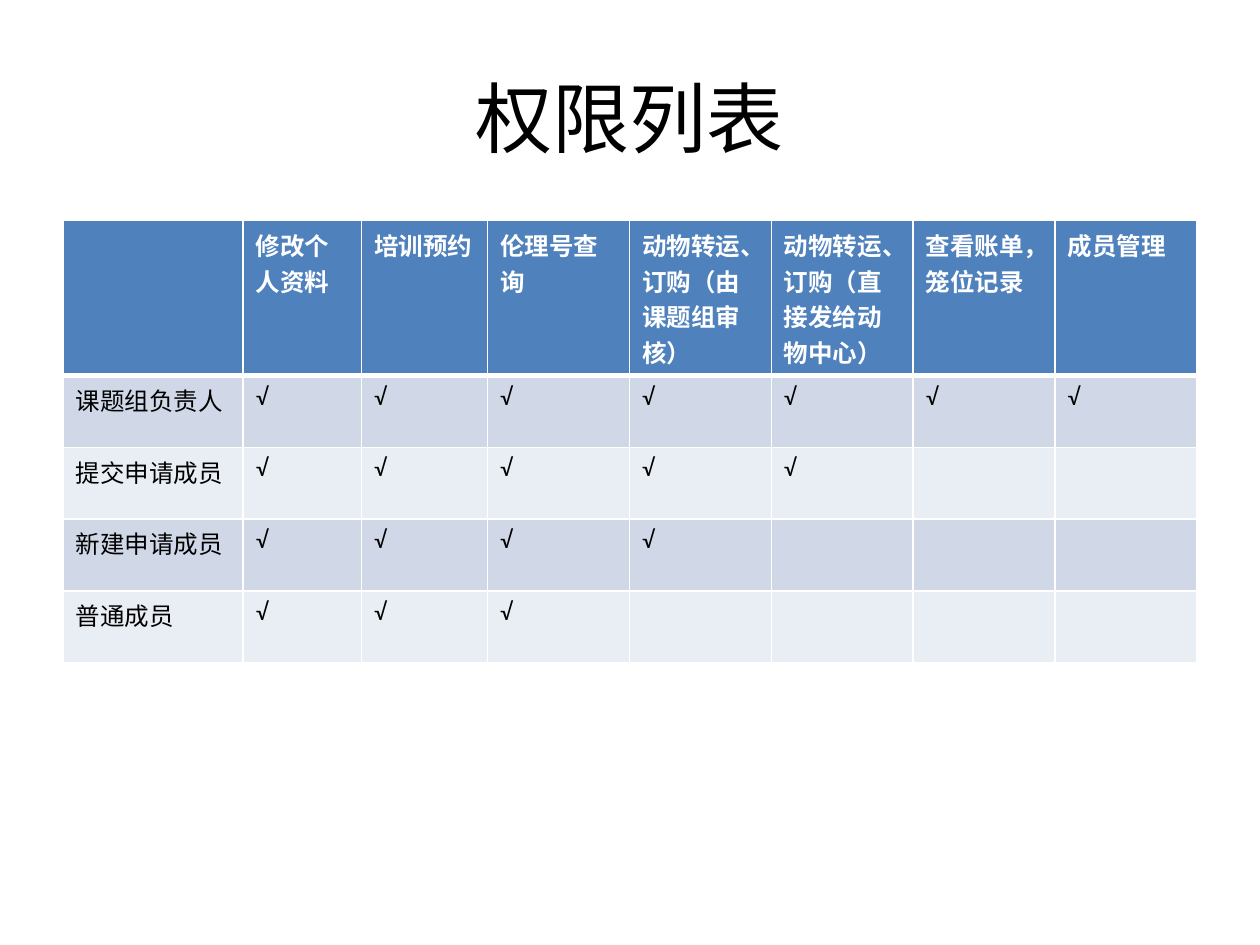
from lxml.etree import SubElement
from pptx import Presentation
from pptx.dml.color import RGBColor
from pptx.enum.lang import MSO_LANGUAGE_ID as Language
from pptx.enum.text import MSO_ANCHOR as Anchor, PP_ALIGN as Align
from pptx.oxml.ns import qn
from pptx.util import Inches, Pt

TITLE = "权限列表"
PERMISSIONS = [
    "修改个人资料",
    "培训预约",
    "伦理号查询",
    "动物转运、订购（由课题组审核）",
    "动物转运、订购（直接发给动物中心）",
    "查看账单，笼位记录",
    "成员管理",
]
# Each role holds the first so many permissions.
ROLES = [("课题组负责人", 7), ("提交申请成员", 5), ("新建申请成员", 4), ("普通成员", 3)]
MARK = "√"

THEME = {
    "font": "Calibri",
    "title_size": 44,
    "table_size": 14,
    "text": "000000",
    "header_text": "FFFFFF",
    "header": "4F81BD",
    "bands": ["D0D8E8", "E9EDF4"],
    "border": "FFFFFF",
}

LEFT, WIDTH = 0.5, 9
TABLE_TOP = 1.75
HEADER_HEIGHT, ROLE_HEIGHT = 1.23, 0.57
FIRST_WIDTHS = [1.43, 0.94, 1]


def write(frame, text, size, color, bold=False, align=Align.LEFT):
    para = frame.paragraphs[0]
    para.alignment = align
    span = para.add_run()
    span.text = text
    font = span.font
    font.name, font.size, font.bold = THEME["font"], Pt(size), bold
    font.color.rgb = RGBColor.from_string(color)
    font.language_id = Language.SIMPLIFIED_CHINESE


def set_borders(cell, bottom=1, top=1):
    """Draw all four cell edges, with widths in points."""
    properties = cell._tc.get_or_add_tcPr()
    for edge, points in (("lnL", 1), ("lnR", 1), ("lnT", top), ("lnB", bottom)):
        line = SubElement(properties, qn(f"a:{edge}"), w=str(Pt(points)))
        fill = SubElement(line, qn("a:solidFill"))
        SubElement(fill, qn("a:srgbClr"), val=THEME["border"])


def add_title(page):
    box = page.shapes.add_textbox(Inches(LEFT), Inches(0.3), Inches(WIDTH), Inches(1.25))
    frame = box.text_frame
    frame.word_wrap = True
    frame.vertical_anchor = Anchor.MIDDLE
    write(frame, TITLE, THEME["title_size"], THEME["text"], align=Align.CENTER)


def add_permission_table(page):
    rows = [[""] + PERMISSIONS]
    for role, count in ROLES:
        rows.append([role] + [MARK] * count + [""] * (len(PERMISSIONS) - count))

    equal_count = len(rows[0]) - len(FIRST_WIDTHS)
    equal_width = (WIDTH - sum(FIRST_WIDTHS)) / equal_count
    widths = FIRST_WIDTHS + [equal_width] * equal_count
    heights = [HEADER_HEIGHT] + [ROLE_HEIGHT] * len(ROLES)

    table = page.shapes.add_table(
        len(rows), len(widths), Inches(LEFT), Inches(TABLE_TOP),
        Inches(WIDTH), Inches(sum(heights)),
    ).table
    for column, width in zip(table.columns, widths):
        column.width = Inches(width)
    for row, height in zip(table.rows, heights):
        row.height = Inches(height)

    for row_index, texts in enumerate(rows):
        header = row_index == 0
        fill = THEME["header"] if header else THEME["bands"][(row_index - 1) % 2]
        color = THEME["header_text"] if header else THEME["text"]
        for column_index, text in enumerate(texts):
            cell = table.cell(row_index, column_index)
            set_borders(cell, bottom=3 if header else 1, top=3 if row_index == 1 else 1)
            cell.fill.solid()
            cell.fill.fore_color.rgb = RGBColor.from_string(fill)
            if text:
                write(cell.text_frame, text, THEME["table_size"], color, bold=header)


def main():
    deck = Presentation()
    deck.slide_width, deck.slide_height = Inches(10), Inches(7.5)
    page = deck.slides.add_slide(deck.slide_layouts[6])
    add_title(page)
    add_permission_table(page)
    deck.save("out.pptx")


if __name__ == "__main__":
    main()
